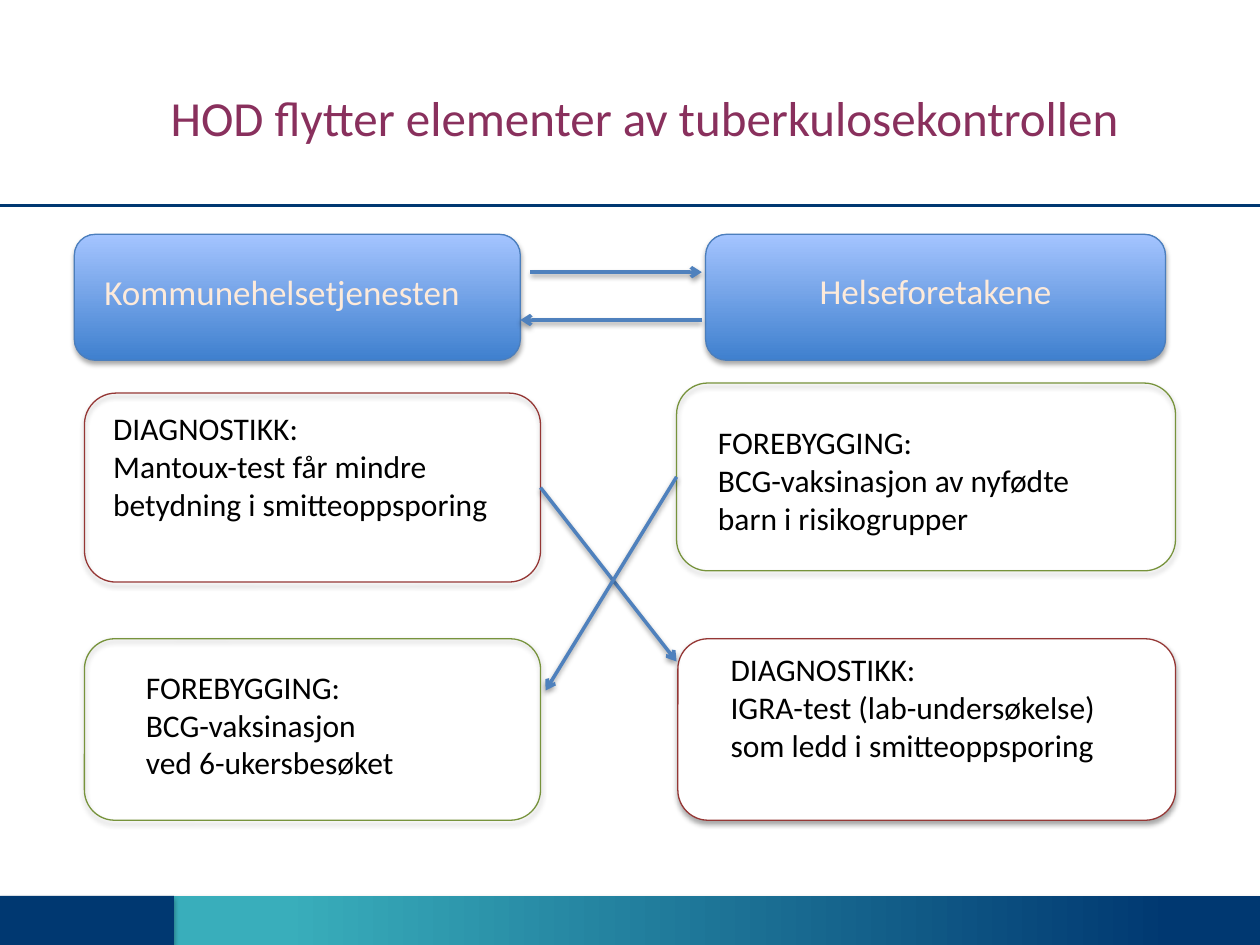
from lxml import etree
from pptx import Presentation
from pptx.dml.color import RGBColor
from pptx.enum.shapes import MSO_CONNECTOR, MSO_SHAPE
from pptx.enum.text import MSO_ANCHOR, PP_ALIGN
from pptx.oxml import parse_xml
from pptx.oxml.ns import nsdecls, qn
from pptx.util import Inches, Pt

NAVY = RGBColor(0x00, 0x38, 0x71)
TEAL = RGBColor(0x39, 0xAE, 0xBB)
PLUM = RGBColor(0x89, 0x30, 0x5D)
BLACK = RGBColor(0x00, 0x00, 0x00)
WHITE = RGBColor(0xFF, 0xFF, 0xFF)
CREAM = RGBColor(0xFD, 0xEA, 0xDA)
GREEN = RGBColor(0x77, 0x93, 0x3C)
RED = RGBColor(0x95, 0x37, 0x35)
ARROW_BLUE = RGBColor(0x4F, 0x81, 0xBD)
HEADER_LINE = RGBColor(0x4B, 0x7E, 0xBC)
HEADER_DARK = RGBColor(0x3F, 0x80, 0xCE)
HEADER_LIGHT = RGBColor(0xA4, 0xC4, 0xFF)


def add_shadow(shape, distance=1.8, opacity=35):
    """Give the shape a soft black shadow that falls straight down."""
    shape._element.spPr.append(parse_xml(
        f'<a:effectLst {nsdecls("a")}>'
        f'<a:outerShdw blurRad="{Pt(3.1)}" dist="{Pt(distance)}" dir="5400000" rotWithShape="0">'
        f'<a:srgbClr val="000000"><a:alpha val="{opacity * 1000}"/></a:srgbClr>'
        '</a:outerShdw></a:effectLst>'))


def set_gradient(shape, stops, angle):
    shape.fill.gradient()
    shape.fill.gradient_angle = angle
    for stop, (position, color) in zip(shape.fill.gradient_stops, stops):
        stop.position = position
        stop.color.rgb = color


def add_box(slide, kind, left, top, width, height, fill=None, gradient=None, angle=0, line=None):
    shape = slide.shapes.add_shape(
        kind, Inches(left), Inches(top), Inches(width), Inches(height))
    if gradient:
        set_gradient(shape, gradient, angle)
    elif fill is not None:
        shape.fill.solid()
        shape.fill.fore_color.rgb = fill
    else:
        shape.fill.background()
    if line is not None:
        shape.line.color.rgb = line
        shape.line.width = Pt(0.75)
    else:
        shape.line.fill.background()
    add_shadow(shape)
    return shape


def add_text(slide, left, top, width, height, lines, size=18, color=BLACK,
             align=PP_ALIGN.LEFT, anchor=MSO_ANCHOR.TOP):
    box = slide.shapes.add_textbox(Inches(left), Inches(top), Inches(width), Inches(height))
    frame = box.text_frame
    frame.word_wrap = True
    frame.vertical_anchor = anchor
    frame.text = "\n".join(lines)
    for paragraph in frame.paragraphs:
        paragraph.alignment = align
        paragraph.font.size = Pt(size)
        paragraph.font.name = "Calibri"
        paragraph.font.color.rgb = color


def add_line(slide, start, end, color):
    points = [Inches(value) for value in (*start, *end)]
    line = slide.shapes.add_connector(MSO_CONNECTOR.STRAIGHT, *points)
    line.line.color.rgb = color
    line.line.width = Pt(2)
    return line


def add_arrow(slide, start, end, source=None, site=None):
    arrow = add_line(slide, start, end, ARROW_BLUE)
    etree.SubElement(arrow.line._get_or_add_ln(), qn("a:tailEnd"), type="arrow")
    add_shadow(arrow, distance=1.6, opacity=38)
    if source is not None:
        arrow.begin_connect(source, site)


def main():
    presentation = Presentation()
    presentation.slide_width = Inches(10)
    presentation.slide_height = Inches(7.5)
    slide = presentation.slides.add_slide(presentation.slide_layouts[6])

    # Footer band and title rule
    add_box(slide, MSO_SHAPE.RECTANGLE, 1.38, 7.11, 8.62, 0.39,
            gradient=[(0.10, TEAL), (0.92, NAVY)])
    add_box(slide, MSO_SHAPE.RECTANGLE, 0, 7.11, 1.38, 0.39, fill=NAVY)
    rule = add_line(slide, (0, 1.63), (10, 1.63), NAVY)
    etree.SubElement(rule._element.spPr, qn("a:effectLst"))

    # Title
    add_text(slide, 0.35, 0.3, 9.53, 1.25,
             ["HOD flytter elementer av tuberkulosekontrollen"],
             size=28, color=PLUM, align=PP_ALIGN.CENTER, anchor=MSO_ANCHOR.MIDDLE)

    # Column headers
    for left, width in ((0.59, 3.54), (5.6, 3.65)):
        add_box(slide, MSO_SHAPE.ROUNDED_RECTANGLE, left, 1.86, width, 1,
                gradient=[(0, HEADER_DARK), (1, HEADER_LIGHT)], angle=90, line=HEADER_LINE)
    add_text(slide, 0.73, 2.1, 3.11, 0.44, ["Kommunehelsetjenesten"], size=20, color=CREAM)
    add_text(slide, 5.89, 2.09, 3.07, 0.44, ["Helseforetakene"], size=20, color=CREAM,
             align=PP_ALIGN.CENTER)

    # Task boxes: red for diagnostics, green for prevention
    rounded = MSO_SHAPE.ROUNDED_RECTANGLE
    mantoux = add_box(slide, rounded, 0.67, 3.12, 3.62, 1.5, line=RED)
    newborn = add_box(slide, rounded, 5.37, 3.04, 3.96, 1.49, line=GREEN)
    add_box(slide, rounded, 0.67, 5.07, 3.62, 1.44, line=GREEN)
    add_box(slide, rounded, 5.38, 5.07, 3.95, 1.44, fill=WHITE, line=RED)

    # Task texts
    for left, top, width, heading, body in (
            (0.8, 3.2, 3.33, "DIAGNOSTIKK:",
             "Mantoux-test får mindre betydning i smitteoppsporing"),
            (5.6, 3.31, 3.27, "FOREBYGGING:",
             "BCG-vaksinasjon av nyfødte barn i risikogrupper"),
            (1.06, 5.25, 2.2, "FOREBYGGING:",
             "BCG-vaksinasjon ved 6-ukersbesøket"),
            (5.7, 5.11, 3.46, "DIAGNOSTIKK:",
             "IGRA-test (lab-undersøkelse) som ledd i smitteoppsporing")):
        add_text(slide, left, top, width, 1.01, [heading, body])

    # Arrows between the columns
    add_arrow(slide, (4.21, 2.16), (5.57, 2.16))
    add_arrow(slide, (5.57, 2.54), (4.13, 2.54))
    add_arrow(slide, (4.29, 3.87), (5.37, 5.25), source=mantoux, site=3)
    add_arrow(slide, (5.37, 3.79), (4.33, 5.48), source=newborn, site=1)

    presentation.save("out.pptx")


if __name__ == "__main__":
    main()
